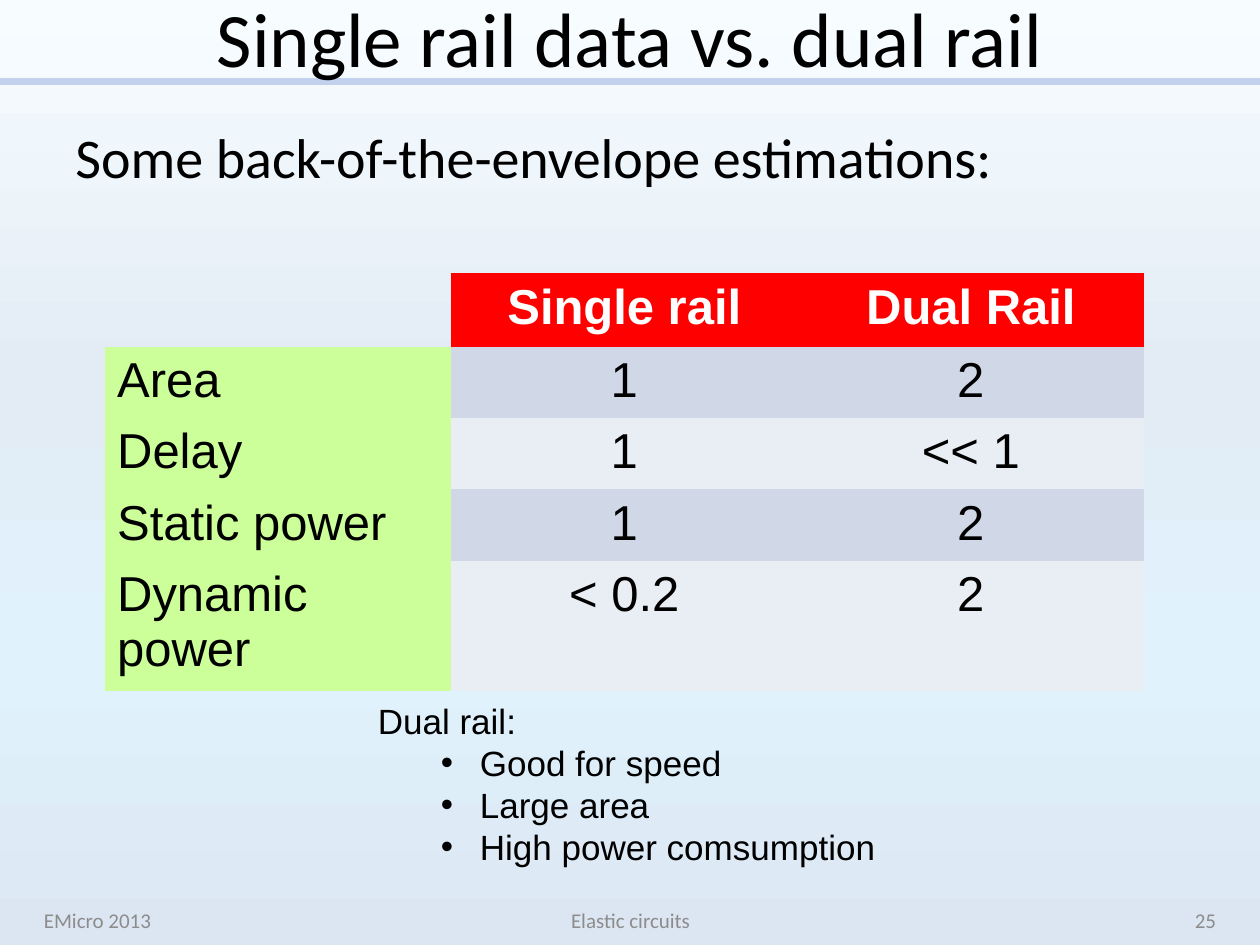
from lxml.etree import SubElement
from pptx import Presentation
from pptx.dml.color import RGBColor
from pptx.enum.shapes import MSO_CONNECTOR as Connector
from pptx.enum.text import MSO_ANCHOR as Anchor, PP_ALIGN as Align
from pptx.oxml.ns import qn
from pptx.util import Inches, Pt

NO_STYLE_NO_GRID = "{2D5ABB26-0587-4C30-8999-92F81FD0307C}"


def color(value):
    return RGBColor.from_string(value)


def write(para, text, size, font="Calibri", fill="000000", bold=False, align=Align.LEFT):
    para.alignment = align
    span = para.add_run()
    span.text = text
    span.font.size = Pt(size)
    span.font.name = font
    span.font.bold = bold
    span.font.color.rgb = color(fill)


deck = Presentation()
deck.slide_width, deck.slide_height = Inches(10), Inches(7.5)
page = deck.slides.add_slide(deck.slide_layouts[6])

# Background gradient, top to bottom
background = page.background.fill
background.gradient()
background.gradient_angle = 270
stops = page.element.find(".//" + qn("a:gsLst"))
for stop in list(stops):
    stops.remove(stop)
for percent, shade in [(0, "F7FDFF"), (40, "E3EBF5"), (70, "E0F3FC"), (100, "DCE6F2")]:
    stop = SubElement(stops, qn("a:gs"), pos=str(percent * 1000))
    SubElement(stop, qn("a:srgbClr"), val=shade)

# Rule under the title
rule = page.shapes.add_connector(
    Connector.STRAIGHT, Inches(0), Inches(0.65), Inches(10), Inches(0.65))
rule.line.color.rgb = color("C2D1ED")
rule.line.width = Pt(4)
SubElement(rule.element.spPr, qn("a:effectLst"))

# Title, lead-in and footer
gray = "8C8C8C"
for text, left, top, width, height, anchor, style in [
    ("Single rail data vs. dual rail", 0.5, 0, 9, 0.58, Anchor.MIDDLE,
     dict(size=44, align=Align.CENTER)),
    ("Some back-of-the-envelope estimations:", 0.5, 0.92, 9, 0.75, Anchor.TOP,
     dict(size=32)),
    ("EMicro 2013", 0.25, 7.1, 2.33, 0.4, Anchor.MIDDLE,
     dict(size=12, fill=gray)),
    ("Elastic circuits", 3.42, 7.1, 3.17, 0.4, Anchor.MIDDLE,
     dict(size=12, fill=gray, align=Align.CENTER)),
    ("25", 7.42, 7.1, 2.33, 0.4, Anchor.MIDDLE,
     dict(size=12, fill=gray, align=Align.RIGHT)),
]:
    box = page.shapes.add_textbox(Inches(left), Inches(top), Inches(width), Inches(height))
    box.text_frame.word_wrap = True
    box.text_frame.vertical_anchor = anchor
    write(box.text_frame.paragraphs[0], text, **style)

# Comparison table
rows = [
    ("", "Single rail", "Dual Rail"),
    ("Area", "1", "2"),
    ("Delay", "1", "<< 1"),
    ("Static power", "1", "2"),
    ("Dynamic power", "< 0.2", "2"),
]
heights = [0.58, 0.53, 0.53, 0.53, 0.97]
frame = page.shapes.add_table(
    len(rows), 3, Inches(0.83), Inches(2.17), Inches(8.25), Inches(sum(heights)))
table = frame.table
frame.element.find(".//" + qn("a:tableStyleId")).text = NO_STYLE_NO_GRID
for column in table.columns:
    column.width = Inches(2.75)
for r, (values, height) in enumerate(zip(rows, heights)):
    table.rows[r].height = Inches(height)
    for c, value in enumerate(values):
        cell = table.cell(r, c)
        if not value:
            cell.fill.background()
            continue
        header = r == 0
        band = "D0D8E8" if r % 2 else "E9EDF4"
        cell.fill.solid()
        cell.fill.fore_color.rgb = color("FF0000" if header else band if c else "CCFF99")
        write(cell.text_frame.paragraphs[0], value, 28, font="Arial", bold=header,
              fill="FFFFFF" if header else "000000",
              align=Align.CENTER if c else Align.LEFT)

# Conclusions on dual rail
box = page.shapes.add_textbox(Inches(2.9), Inches(5.5), Inches(4.19), Inches(1.45))
box.text_frame.word_wrap = True
write(box.text_frame.paragraphs[0], "Dual rail:", 20, font="Arial")
for text in ["Good for speed", "Large area", "High power comsumption"]:
    para = box.text_frame.add_paragraph()
    para.level = 1
    write(para, text, 20, font="Arial")
    layout = para._p.get_or_add_pPr()
    layout.set("marL", str(Inches(0.81)))
    layout.set("indent", str(Inches(-0.31)))
    SubElement(layout, qn("a:buFont"), typeface="Arial")
    SubElement(layout, qn("a:buChar"), char="•")

deck.save("out.pptx")
